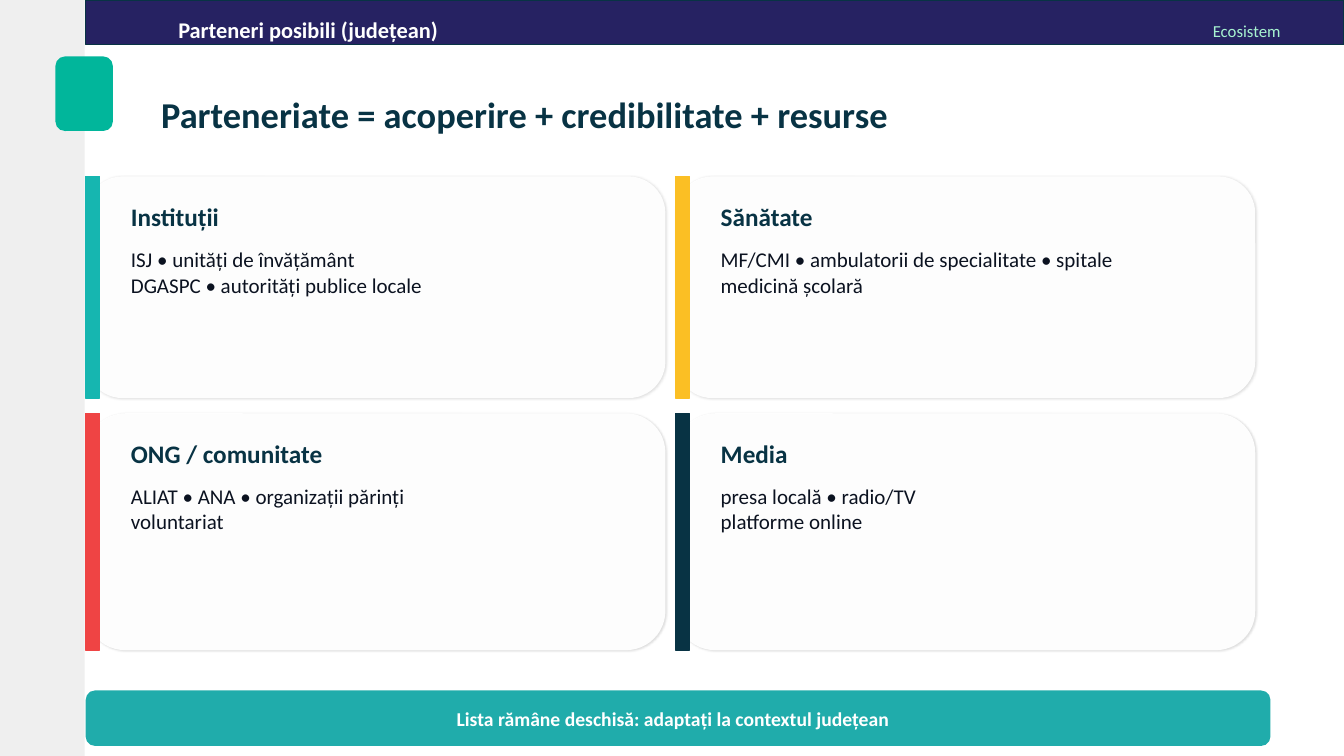
import dataclasses

import lxml.etree
import pptx
import pptx.dml.color
import pptx.enum.shapes
import pptx.enum.text
import pptx.oxml.ns
import pptx.util

Inches = pptx.util.Inches
Pt = pptx.util.Pt
Shape = pptx.enum.shapes.MSO_SHAPE
Align = pptx.enum.text.PP_ALIGN
Anchor = pptx.enum.text.MSO_ANCHOR
qn = pptx.oxml.ns.qn


@dataclasses.dataclass(frozen=True)
class Theme:
    font: str = "Calibri"
    white: str = "FFFFFF"
    margin: str = "EFEFEF"
    navy: str = "262262"
    ink: str = "083344"
    body: str = "0B1220"
    mint: str = "A7F3D0"
    emblem: str = "01B69B"
    teal: str = "16B6B0"
    amber: str = "FBBF24"
    red: str = "EF4444"
    banner: str = "0EA5A4"
    shadow: str = "000000"
    title_size: int = 26
    heading_size: int = 18
    header_size: int = 16
    body_size: int = 15
    banner_size: int = 14
    tag_size: int = 12


def rgb(color):
    return pptx.dml.color.RGBColor.from_string(color)


def add_alpha(color_element, percent):
    alpha = lxml.etree.SubElement(color_element, qn("a:alpha"))
    alpha.set("val", str(percent * 1000))


class SlideBuilder:
    def __init__(self, slide, theme):
        self.slide = slide
        self.theme = theme

    def block(self, kind, left, top, width, height, fill, line=None, opacity=100):
        block = self.slide.shapes.add_shape(
            kind, Inches(left), Inches(top), Inches(width), Inches(height))
        block.shadow.inherit = False
        block.fill.solid()
        block.fill.fore_color.rgb = rgb(fill)
        if opacity < 100:
            add_alpha(block.element.spPr.find(qn("a:solidFill"))[0], opacity)
        if line:
            block.line.color.rgb = rgb(line)
            block.line.width = Pt(1)
        else:
            block.line.fill.background()
        return block

    def soft_shadow(self, block):
        effects = block.element.spPr.find(qn("a:effectLst"))
        shadow = lxml.etree.SubElement(effects, qn("a:outerShdw"))
        shadow.set("blurRad", str(Pt(1.5)))
        shadow.set("dist", str(Pt(0.8)))
        shadow.set("dir", str(45 * 60000))
        shadow.set("algn", "bl")
        shadow.set("rotWithShape", "0")
        color = lxml.etree.SubElement(shadow, qn("a:srgbClr"))
        color.set("val", self.theme.shadow)
        add_alpha(color, 12)

    def text(self, left, top, width, height, lines, size, color,
             bold=False, align=Align.LEFT, anchor=Anchor.MIDDLE):
        frame = self.slide.shapes.add_textbox(
            Inches(left), Inches(top), Inches(width), Inches(height)).text_frame
        frame.word_wrap = True
        frame.vertical_anchor = anchor
        for index, line in enumerate(lines):
            paragraph = frame.add_paragraph() if index else frame.paragraphs[0]
            paragraph.alignment = align
            run = paragraph.add_run()
            run.text = line
            run.font.name = self.theme.font
            run.font.size = Pt(size)
            run.font.bold = bold
            run.font.color.rgb = rgb(color)

    def partner_card(self, left, top, height, accent, heading, partners):
        theme = self.theme
        card = self.block(Shape.ROUNDED_RECTANGLE, left, top, 5.75, height,
                          theme.white, opacity=94)
        self.soft_shadow(card)
        self.block(Shape.RECTANGLE, left, top, 0.14, height, accent, line=accent)
        self.text(left + 0.35, top + 0.22, 5.25, 0.35, [heading],
                  theme.heading_size, theme.ink, bold=True)
        self.text(left + 0.35, top + 0.65, 5.2, height - 0.75, partners,
                  theme.body_size, theme.body, anchor=Anchor.TOP)


def main():
    presentation = pptx.Presentation()
    presentation.slide_width = Inches(13.33)
    presentation.slide_height = Inches(7.5)
    theme = Theme()
    slide = presentation.slides.add_slide(presentation.slide_layouts[6])
    builder = SlideBuilder(slide, theme)

    builder.block(Shape.RECTANGLE, 0, 0, 0.84, 7.5, theme.margin)
    builder.block(Shape.ROUNDED_RECTANGLE, 0.55, 0.56, 0.57, 0.74, theme.emblem)
    builder.block(Shape.RECTANGLE, 0.85, 0, 12.48, 0.44, theme.navy, line=theme.ink)
    builder.text(1.67, 0.14, 8.53, 0.3, ["Parteneri posibili (județean)"],
                 theme.header_size, theme.white, bold=True)
    builder.text(10.2, 0.16, 2.6, 0.3, ["Ecosistem"],
                 theme.tag_size, theme.mint, align=Align.RIGHT)
    builder.text(1.5, 0.86, 12, 0.55,
                 ["Parteneriate = acoperire + credibilitate + resurse"],
                 theme.title_size, theme.ink, bold=True)

    partner_rows = [
        (1.75, 2.2, [
            (theme.teal, "Instituții",
             ["ISJ • unități de învățământ", "DGASPC • autorități publice locale"]),
            (theme.amber, "Sănătate",
             ["MF/CMI • ambulatorii de specialitate • spitale", "medicină școlară"]),
        ]),
        (4.1, 2.35, [
            (theme.red, "ONG / comunitate",
             ["ALIAT • ANA • organizații părinți", "voluntariat"]),
            (theme.ink, "Media",
             ["presa locală • radio/TV", "platforme online"]),
        ]),
    ]
    for top, height, cards in partner_rows:
        for column, (accent, heading, partners) in enumerate(cards):
            builder.partner_card(0.85 + column * 5.85, top, height,
                                 accent, heading, partners)

    builder.block(Shape.ROUNDED_RECTANGLE, 0.85, 6.85, 11.75, 0.55,
                  theme.banner, opacity=92)
    builder.text(1, 6.98, 11.35, 0.3,
                 ["Lista rămâne deschisă: adaptați la contextul județean"],
                 theme.banner_size, theme.white, bold=True, align=Align.CENTER)

    presentation.save("out.pptx")


if __name__ == "__main__":
    main()
